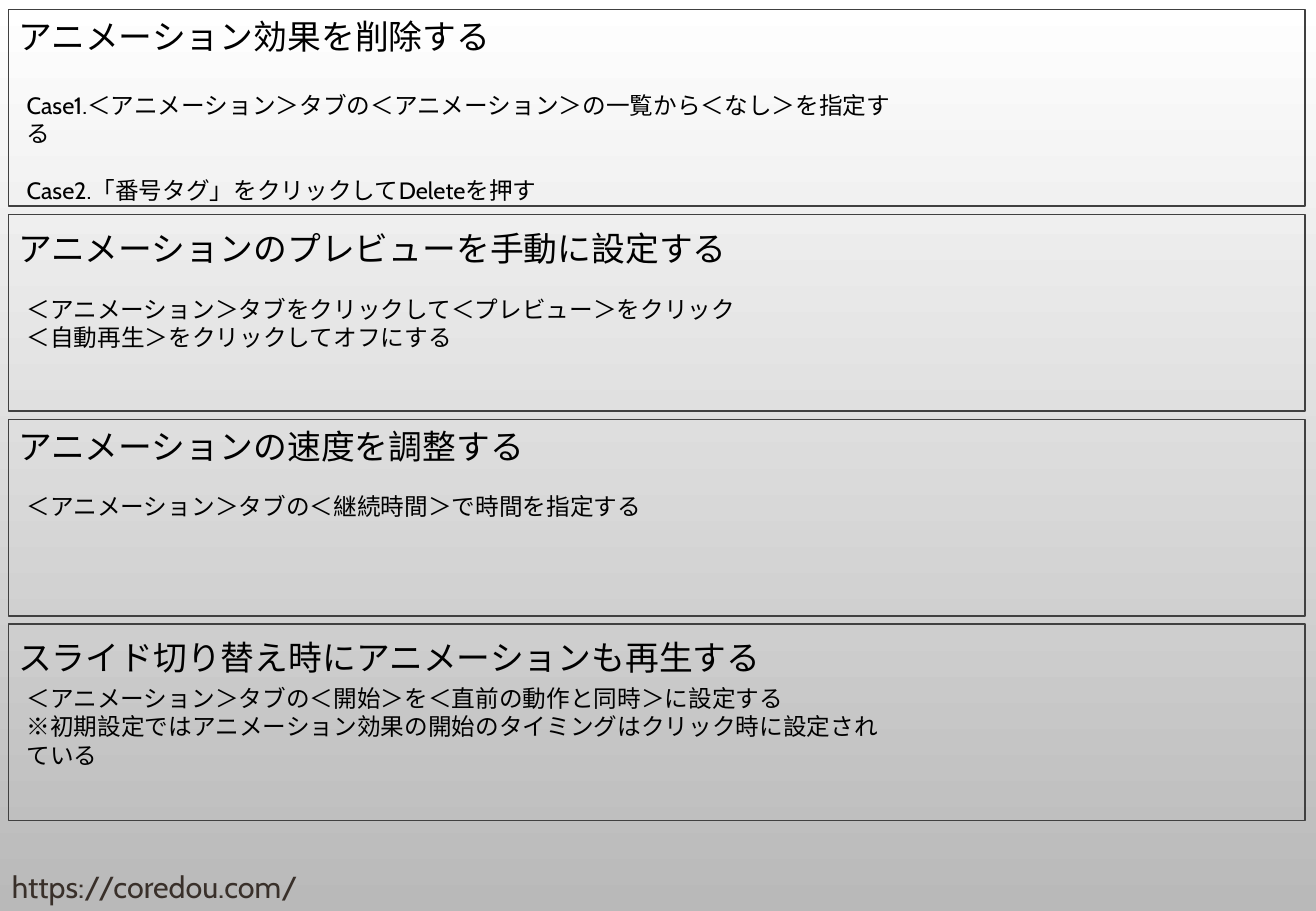
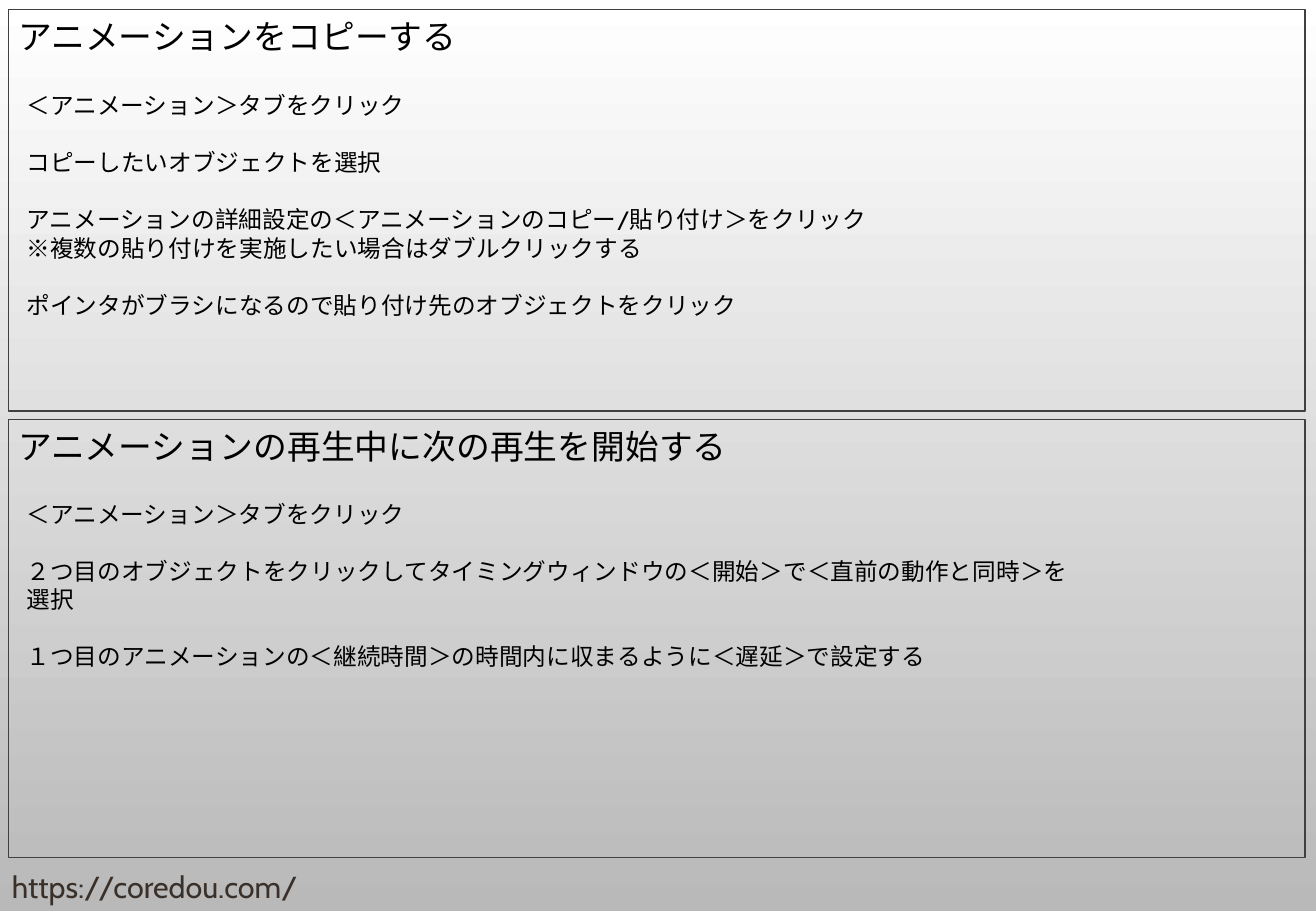
from pptx import Presentation, util as u
from pptx.dml.color import RGBColor
from pptx.enum import shapes, text

THEME = {
    "font": "Cabin",
    "ink": "000000",
    "border": "404040",
    "footer": "39302A",
    "backdrop": ("FFFFFF", "B9B9B9"),
    "heading_pt": 20,
    "body_pt": 14,
    "footer_pt": 18,
    "group_gap_pt": 17,
}
WIDTH, HEIGHT = 10.83, 7.5
LEFT, TOP, PANEL_WIDTH, GAP = 0.07, 0.08, 10.67, 0.07
ROW = 5.06 / 3
HEADING_LEFT, HEADING_WIDTH, HEADING_HEIGHT = 0.05, 6.45, 0.44
BODY_LEFT, BODY_WIDTH, WIDE_BODY = 0.12, 7.38, 8.88
FOOTER_BOX = (0, 7.1, 3.47, 0.4)
FOOTER = "https://coredou.com/"

SLIDES = [
    [
        {"row": 0, "span": 1, "heading": "アニメーション効果を削除する",
         "heading_drop": 0, "body_drop": 0.62, "groups": [
             ["Case1.＜アニメーション＞タブの＜アニメーション＞の一覧から＜なし＞を指定する"],
             ["Case2.「番号タグ」をクリックしてDeleteを押す"]]},
        {"row": 1, "span": 1, "heading": "アニメーションのプレビューを手動に設定する",
         "heading_drop": 0.06, "body_drop": 0.61, "groups": [
             ["＜アニメーション＞タブをクリックして＜プレビュー＞をクリック",
              "＜自動再生＞をクリックしてオフにする"]]},
        {"row": 2, "span": 1, "heading": "アニメーションの速度を調整する",
         "heading_drop": 0, "body_drop": 0.55, "groups": [
             ["＜アニメーション＞タブの＜継続時間＞で時間を指定する"]]},
        {"row": 3, "span": 1, "heading": "スライド切り替え時にアニメーションも再生する",
         "heading_drop": 0.05, "body_drop": 0.44, "groups": [
             ["＜アニメーション＞タブの＜開始＞を＜直前の動作と同時＞に設定する",
              "※初期設定ではアニメーション効果の開始のタイミングはクリック時に設定されている"]]},
    ],
    [
        {"row": 0, "span": 2, "heading": "アニメーションをコピーする",
         "heading_drop": 0, "body_drop": 0.62, "groups": [
             ["＜アニメーション＞タブをクリック"],
             ["コピーしたいオブジェクトを選択"],
             ["アニメーションの詳細設定の＜アニメーションのコピー/貼り付け＞をクリック",
              "※複数の貼り付けを実施したい場合はダブルクリックする"],
             ["ポインタがブラシになるので貼り付け先のオブジェクトをクリック"]]},
        {"row": 2, "span": 2.18, "heading": "アニメーションの再生中に次の再生を開始する",
         "heading_drop": 0, "body_drop": 0.61, "body_width": WIDE_BODY, "groups": [
             ["＜アニメーション＞タブをクリック"],
             ["２つ目のオブジェクトをクリックしてタイミングウィンドウの＜開始＞で＜直前の動作と同時＞を選択"],
             ["１つ目のアニメーションの＜継続時間＞の時間内に収まるように＜遅延＞で設定する"]]},
    ],
]


def inches(box):
    return [u.Inches(length) for length in box]


def write(holder, groups, size, color, anchor=text.MSO_ANCHOR.TOP, grow=True):
    frame = holder.text_frame
    frame.word_wrap = True
    frame.vertical_anchor = anchor
    frame.auto_size = (text.MSO_AUTO_SIZE.SHAPE_TO_FIT_TEXT if grow
                       else text.MSO_AUTO_SIZE.NONE)
    lines = [(line, g > 0 and i == 0)
             for g, group in enumerate(groups) for i, line in enumerate(group)]
    for n, (line, opens_group) in enumerate(lines):
        paragraph = frame.add_paragraph() if n else frame.paragraphs[0]
        paragraph.alignment = text.PP_ALIGN.LEFT
        if opens_group:
            paragraph.space_before = u.Pt(THEME["group_gap_pt"])
        run = paragraph.add_run()
        run.text = line
        run.font.name = THEME["font"]
        run.font.size = u.Pt(size)
        run.font.color.rgb = RGBColor.from_string(color)


def add_panel(slide, panel, title):
    top = TOP + panel["row"] * ROW
    border = slide.shapes.add_shape(
        shapes.MSO_SHAPE.RECTANGLE,
        *inches((LEFT, top, PANEL_WIDTH, panel["span"] * ROW - GAP)))
    border.shadow.inherit = False
    border.fill.background()
    border.line.color.rgb = RGBColor.from_string(THEME["border"])
    border.line.width = u.Pt(1)

    place = inches((HEADING_LEFT, top + panel["heading_drop"],
                    HEADING_WIDTH, HEADING_HEIGHT))
    if title is None:
        heading = slide.shapes.add_textbox(*place)
    else:
        heading = title
        heading.left, heading.top, heading.width, heading.height = place
    write(heading, [[panel["heading"]]], THEME["heading_pt"], THEME["ink"])

    body = slide.shapes.add_textbox(*inches((
        BODY_LEFT, top + panel["body_drop"],
        panel.get("body_width", BODY_WIDTH), HEADING_HEIGHT)))
    write(body, panel["groups"], THEME["body_pt"], THEME["ink"])


def main():
    deck = Presentation()
    deck.slide_width, deck.slide_height = inches((WIDTH, HEIGHT))
    backdrop = deck.slide_master.background.fill
    backdrop.gradient()
    backdrop.gradient_angle = 270
    for stop, color, position in zip(backdrop.gradient_stops, THEME["backdrop"], (0, 1)):
        stop.color.rgb = RGBColor.from_string(color)
        stop.position = position

    for panels in SLIDES:
        slide = deck.slides.add_slide(deck.slide_layouts[5])
        footer = slide.shapes.add_textbox(*inches(FOOTER_BOX))
        write(footer, [[FOOTER]], THEME["footer_pt"], THEME["footer"],
              text.MSO_ANCHOR.MIDDLE, grow=False)
        for n, panel in enumerate(panels):
            add_panel(slide, panel, None if n else slide.shapes.title)
    deck.save("out.pptx")


if __name__ == "__main__":
    main()
